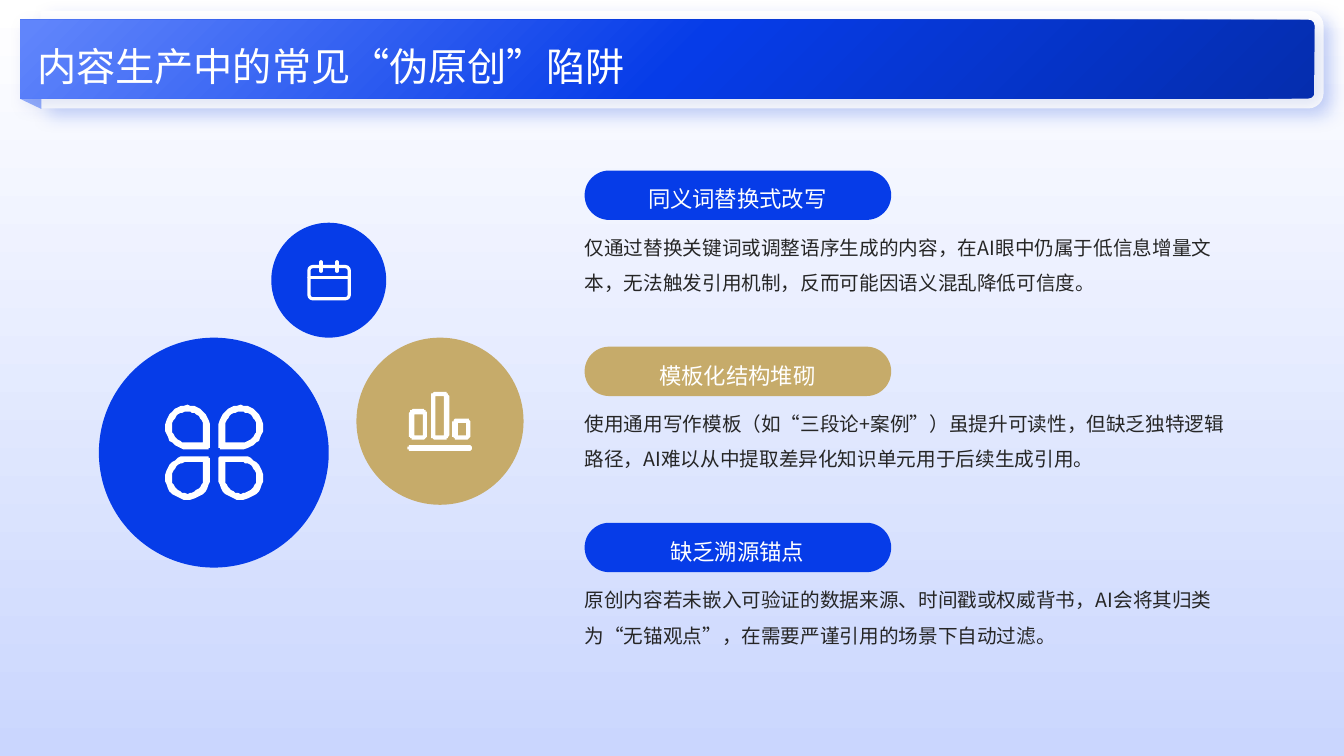
from math import cos, pi, sin

from lxml import etree
from pptx import Presentation
from pptx.dml.color import RGBColor
from pptx.enum.shapes import MSO_CONNECTOR, MSO_SHAPE
from pptx.enum.text import MSO_ANCHOR, PP_ALIGN
from pptx.oxml import parse_xml
from pptx.oxml.ns import nsdecls, qn
from pptx.util import Pt

RECTANGLE = MSO_SHAPE.RECTANGLE
ROUNDED = MSO_SHAPE.ROUNDED_RECTANGLE
OVAL = MSO_SHAPE.OVAL
TRIANGLE = MSO_SHAPE.RIGHT_TRIANGLE
BANNER = MSO_SHAPE.ROUND_2_SAME_RECTANGLE
STRAIGHT = MSO_CONNECTOR.STRAIGHT
TOP, MIDDLE = MSO_ANCHOR.TOP, MSO_ANCHOR.MIDDLE
LEFT, CENTER = PP_ALIGN.LEFT, PP_ALIGN.CENTER

FONT = "Noto Sans CJK SC"
WIDTH, HEIGHT = 960, 540
ARC_STEPS = 10
COLORS = {
    "white": "FFFFFF",
    "pale": "CAD6FE",
    "blue": "063CE8",
    "light_blue": "6085FB",
    "dark_blue": "052DAE",
    "fold": "95AEFC",
    "gold": "C6AB6A",
    "ink": "262626",
}
TRAPS = [
    ("同义词替换式改写", "blue",
     "仅通过替换关键词或调整语序生成的内容，在AI眼中仍属于低信息增量文本，"
     "无法触发引用机制，反而可能因语义混乱降低可信度。"),
    ("模板化结构堆砌", "gold",
     "使用通用写作模板（如“三段论+案例”）虽提升可读性，但缺乏独特逻辑路径，"
     "AI难以从中提取差异化知识单元用于后续生成引用。"),
    ("缺乏溯源锚点", "blue",
     "原创内容若未嵌入可验证的数据来源、时间戳或权威背书，AI会将其归类为“无锚观点”，"
     "在需要严谨引用的场景下自动过滤。"),
]


def color(name):
    return RGBColor.from_string(COLORS[name])


def style_solid(shape, fill):
    shape.shadow.inherit = False
    shape.fill.solid()
    shape.fill.fore_color.rgb = color(fill)
    shape.line.fill.background()


def add_solid(slide, kind, left, top, width, height, fill, adjustments=(), rotation=0):
    shape = slide.shapes.add_shape(kind, Pt(left), Pt(top), Pt(width), Pt(height))
    style_solid(shape, fill)
    shape.rotation = rotation
    for index, value in enumerate(adjustments):
        shape.adjustments[index] = value
    return shape


def rounded_contour(left, top, width, height, radii):
    points = []
    corners = [(0, 0), (1, 0), (1, 1), (0, 1)]
    for index, ((right, bottom), radius) in enumerate(zip(corners, radii)):
        x = left + radius + right * (width - 2 * radius)
        y = top + radius + bottom * (height - 2 * radius)
        for step in range(ARC_STEPS + 1 if radius else 1):
            angle = pi + (index + step / ARC_STEPS) * pi / 2
            points.append((x + radius * cos(angle), y + radius * sin(angle)))
    return points


def ring_contours(left, top, width, height, radii, weight):
    inner_radii = [max(radius - weight, 0) for radius in radii]
    return [
        rounded_contour(left, top, width, height, radii),
        rounded_contour(left + weight, top + weight, width - 2 * weight,
                        height - 2 * weight, inner_radii),
    ]


def add_contours(slide, contours):
    builder = slide.shapes.build_freeform(*contours[0][0], scale=float(Pt(1)))
    builder.add_line_segments(contours[0][1:], close=True)
    for contour in contours[1:]:
        builder.move_to(*contour[0])
        builder.add_line_segments(contour[1:], close=True)
    style_solid(builder.convert_to_shape(), "white")


def add_stroke(slide, x1, y1, x2, y2, weight):
    connector = slide.shapes.add_connector(STRAIGHT, Pt(x1), Pt(y1), Pt(x2), Pt(y2))
    style_stroke(connector, weight)
    etree.SubElement(connector._element.spPr, qn("a:effectLst"))


def style_stroke(shape, weight):
    shape.line.color.rgb = color("white")
    shape.line.width = Pt(weight)
    line = shape.line._get_or_add_ln()
    line.set("cap", "rnd")
    etree.SubElement(line, qn("a:round"))


def set_gradient(shape, stops, direction):
    stop_list = "".join(
        f'<a:gs pos="{position * 1000}"><a:srgbClr val="{COLORS[name]}"/></a:gs>'
        for position, name in stops
    )
    shape.fill.gradient()
    properties = shape._element.spPr
    properties.replace(properties.find(qn("a:gradFill")), parse_xml(
        f'<a:gradFill {nsdecls("a")} rotWithShape="1">'
        f"<a:gsLst>{stop_list}</a:gsLst>{direction}</a:gradFill>"
    ))


def set_shadow(shape, name, alpha, blur, distance):
    shape._element.spPr.find(qn("a:effectLst")).append(parse_xml(
        f'<a:outerShdw {nsdecls("a")} blurRad="{Pt(blur)}" dist="{Pt(distance)}" '
        f'dir="2700000" algn="tl" rotWithShape="0"><a:srgbClr val="{COLORS[name]}">'
        f'<a:alpha val="{alpha * 1000}"/></a:srgbClr></a:outerShdw>'
    ))


def add_text(slide, text, left, top, width, height, *, size, fill="white",
             spacing=1.3, align=LEFT, anchor=MIDDLE):
    box = slide.shapes.add_textbox(Pt(left), Pt(top), Pt(width), Pt(height))
    frame = box.text_frame
    frame.word_wrap = True
    frame.vertical_anchor = anchor
    frame.margin_left = frame.margin_right = frame.margin_top = frame.margin_bottom = 0
    paragraph = frame.paragraphs[0]
    paragraph.alignment = align
    paragraph.line_spacing = spacing
    run = paragraph.add_run()
    run.text = text
    run.font.size = Pt(size)
    run.font.name = FONT
    run.font.color.rgb = color(fill)
    east_asian = etree.SubElement(run._r.get_or_add_rPr(), qn("a:ea"))
    east_asian.set("typeface", FONT)


def add_banner(slide, left, top, width, height, adjustments):
    offset = (width - height) / 2
    return add_solid(slide, BANNER, left + offset, top - offset, height, width,
                     "white", adjustments, 90)


def add_background(slide):
    background = add_solid(slide, RECTANGLE, 0, 0, WIDTH, HEIGHT, "white")
    set_gradient(background, [(0, "white"), (100, "pale")], '<a:lin ang="5400000" scaled="0"/>')


def add_header(slide, title):
    plate = add_banner(slide, 28.8, 7.7, 916.6, 69.8, (0.155, 0.024))
    set_shadow(plate, "blue", 19, 12, 7)
    add_solid(slide, TRIANGLE, 14.4, 70.6, 15.1, 7.2, "fold", rotation=180)
    ribbon = add_banner(slide, 14.4, 14.2, 924.5, 56.2, (0.08, 0))
    set_gradient(
        ribbon, [(1, "light_blue"), (51, "blue"), (100, "dark_blue")],
        '<a:path path="circle"><a:fillToRect r="100000" b="100000"/></a:path>',
    )
    set_shadow(ribbon, "dark_blue", 13, 13, 6)
    add_text(slide, title, 26.6, 20.9, 903.6, 42.5, size=28)


def add_trap(slide, top, heading, fill, body):
    add_solid(slide, ROUNDED, 417.6, top, 219, 35.3, fill, (0.5,))
    add_text(slide, body, 417.6, top + 38.4, 459.4, 57.6,
             size=14, fill="ink", spacing=1.5, anchor=TOP)
    add_text(slide, heading, 427.7, top + 2.7, 198, 29.5, size=16, align=CENTER)


def add_clover_icon(slide):
    contours = []
    for left, top, tip in [(118, 289.4, 2), (156.1, 289.4, 3),
                           (118, 325.5, 1), (156.1, 325.5, 0)]:
        radii = [2.2 if corner == tip else 15.85 for corner in range(4)]
        contours += ring_contours(left, top, 31.7, 31.7, radii, 4.6)
    add_contours(slide, contours)


def add_bars_icon(slide):
    contours = [rounded_contour(290.9, 318.2, 46.4, 3.6, [1.8] * 4)]
    for index, height in enumerate([21.6, 33.8, 15.1]):
        contours += ring_contours(292.3 + 15.5 * index, 313.9 - height,
                                  12.8, height, [3.3] * 4, 3.3)
    add_contours(slide, contours)


def add_calendar_icon(slide):
    frame = add_solid(slide, ROUNDED, 220.7, 190.4, 28.8, 23, "white", (0.12,))
    frame.fill.background()
    style_stroke(frame, 2.3)
    add_stroke(slide, 220.7, 198.4, 249.5, 198.4, 2.3)
    for x in (229.3, 240.8):
        add_stroke(slide, x, 187, x, 193.8, 2.3)


def add_circles(slide):
    for left, top, size, fill in [(70.6, 241.2, 164.2, "blue"),
                                  (193.8, 159.1, 82.1, "blue"),
                                  (254.6, 241.2, 119.4, "gold")]:
        add_solid(slide, OVAL, left, top, size, size, fill)
    add_bars_icon(slide)
    add_clover_icon(slide)
    add_calendar_icon(slide)


def main():
    presentation = Presentation()
    presentation.slide_width = Pt(WIDTH)
    presentation.slide_height = Pt(HEIGHT)
    slide = presentation.slides.add_slide(presentation.slide_layouts[6])
    add_background(slide)
    add_circles(slide)
    for index, (heading, fill, body) in enumerate(TRAPS):
        add_trap(slide, 121.8 + 125.8 * index, heading, fill, body)
    add_header(slide, "内容生产中的常见“伪原创”陷阱")
    presentation.save("out.pptx")


if __name__ == "__main__":
    main()
